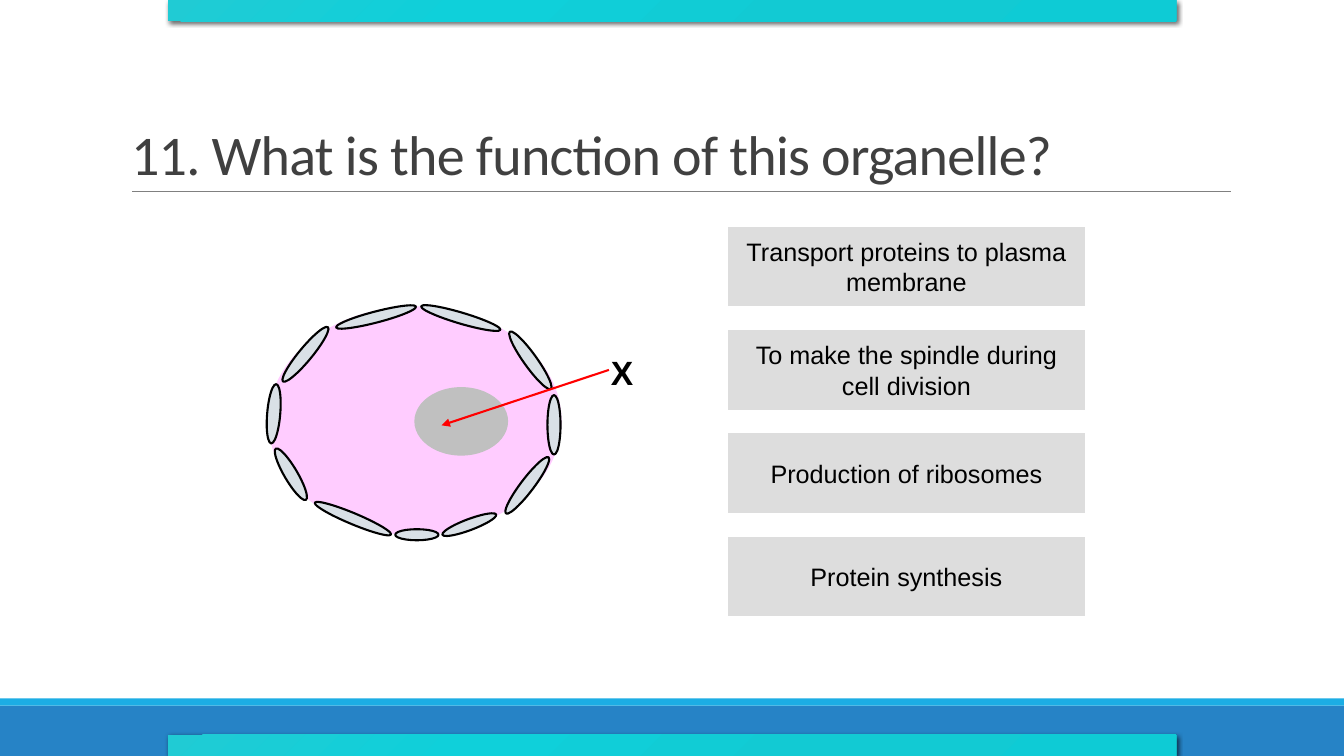
from lxml import etree
from pptx import Presentation
from pptx.dml.color import RGBColor
from pptx.enum.shapes import MSO_CONNECTOR, MSO_SHAPE
from pptx.enum.text import MSO_ANCHOR, MSO_AUTO_SIZE, PP_ALIGN
from pptx.oxml import parse_xml
from pptx.oxml.ns import nsdecls, qn
from pptx.util import Inches, Pt

RECTANGLE = MSO_SHAPE.RECTANGLE
OVAL = MSO_SHAPE.OVAL
BUTTON = MSO_SHAPE.ACTION_BUTTON_CUSTOM
STRAIGHT = MSO_CONNECTOR.STRAIGHT

TITLE = "11. What is the function of this organelle?"
ANSWERS = [
    "Transport proteins to plasma membrane",
    "To make the spindle during cell division",
    "Production of ribosomes",
    "Protein synthesis",
]
COLORS = {
    "footer": "2683C6",
    "footer_edge": "1CADE4",
    "rule": "808080",
    "title": "404040",
    "button": "DDDDDD",
    "text": "000000",
    "nucleus": "FFCCFF",
    "membrane": "D9E0E6",
    "nucleolus": "C0C0C0",
    "pointer": "FF0000",
}
BAND_STOPS = [(0, "0ECBD5"), (34, "12CAD3"), (70, "0FD0DA"), (100, "20CBD4")]
MEMBRANE = [
    (4.88, 4.75, 0.7, 0.13, 307.2),
    (4.91, 3.51, 0.7, 0.13, 234.4),
    (4.16, 3.1, 0.82, 0.11, 196.5),
    (4.37, 5.15, 0.57, 0.11, 339.4),
    (3.09, 5.09, 0.82, 0.11, 22.7),
    (3.32, 3.09, 0.82, 0.11, 345.4),
    (2.68, 3.45, 0.7, 0.13, 309.6),
    (2.59, 4.64, 0.59, 0.13, 239.6),
    (2.42, 4.04, 0.59, 0.13, 274.8),
    (5.2, 4.15, 0.59, 0.13, 270),
    (3.92, 5.25, 0.43, 0.11, 0),
]
PAGE_WIDTH, PAGE_HEIGHT = 13.33, 7.5
BUTTON_LEFT, BUTTON_TOP, BUTTON_WIDTH, BUTTON_HEIGHT = 7.22, 2.25, 3.54, 0.79
BUTTON_STEP = 1.025
BAND_WIDTH, BAND_HEIGHT = 10, 0.21


def color(name):
    return RGBColor.from_string(COLORS[name])


def add_filled(shapes, kind, frame, fill, outline=None):
    shape = shapes.add_shape(kind, *map(Inches, frame))
    shape.shadow.inherit = False
    shape.fill.solid()
    shape.fill.fore_color.rgb = color(fill)
    if outline:
        shape.line.color.rgb = color(outline)
        shape.line.width = Pt(1.5)
    else:
        shape.line.fill.background()
    return shape


def add_line(shapes, start, end, stroke, width):
    line = shapes.add_connector(STRAIGHT, *map(Inches, start + end))
    line.line.color.rgb = color(stroke)
    line.line.width = Pt(width)
    etree.SubElement(line._element.spPr, qn("a:effectLst"))
    return line


def style(para, size, name, font="Arial", bold=False):
    para.font.size = Pt(size)
    para.font.name = font
    para.font.bold = bold
    para.font.color.rgb = color(name)


def add_title(page):
    title = page.shapes.title
    title.left, title.top, title.width, title.height = map(Inches, (1.2, 0.31, 11, 1.59))
    frame = title.text_frame
    frame.text = TITLE
    frame.auto_size = MSO_AUTO_SIZE.NONE
    frame.vertical_anchor = MSO_ANCHOR.BOTTOM
    para = frame.paragraphs[0]
    para.alignment = PP_ALIGN.LEFT
    para.line_spacing = 0.85
    style(para, 40, "title", "Calibri")
    para.runs[0]._r.get_or_add_rPr().set("spc", "-50")


def add_answers(page):
    for row, answer in enumerate(ANSWERS):
        top = BUTTON_TOP + row * BUTTON_STEP
        button = add_filled(page.shapes, BUTTON, (BUTTON_LEFT, top, BUTTON_WIDTH, BUTTON_HEIGHT), "button")
        frame = button.text_frame
        frame.text = answer
        frame.word_wrap = True
        frame.vertical_anchor = MSO_ANCHOR.MIDDLE
        frame.paragraphs[0].alignment = PP_ALIGN.CENTER
        style(frame.paragraphs[0], 18, "text")


def add_organelle(page):
    label = page.shapes.add_textbox(*map(Inches, (5.96, 3.44, 0.42, 0.5)))
    label.text_frame.text = "X"
    label.text_frame.word_wrap = False
    style(label.text_frame.paragraphs[0], 24, "text", bold=True)

    organelle = page.shapes.add_group_shape().shapes
    add_filled(organelle, OVAL, (2.66, 3.04, 2.91, 2.27), "nucleus")
    for *frame, angle in MEMBRANE:
        piece = add_filled(organelle, OVAL, frame, "membrane", "text")
        piece.rotation = angle
    add_filled(organelle, OVAL, (4.11, 3.84, 0.93, 0.68), "nucleolus")

    pointer = add_line(page.shapes, (6.04, 3.67), (4.38, 4.22), "pointer", 1.5)
    etree.SubElement(pointer.line._get_or_add_ln(), qn("a:tailEnd"), type="triangle")


def add_band(page, top):
    left = (PAGE_WIDTH - BAND_WIDTH) / 2
    band = add_filled(page.shapes, RECTANGLE, (left, top, BAND_WIDTH, BAND_HEIGHT), "footer_edge")
    stops = "".join(
        f'<a:gs pos="{position * 1000}"><a:srgbClr val="{value}"/></a:gs>'
        for position, value in BAND_STOPS
    )
    gradient = parse_xml(
        f'<a:gradFill {nsdecls("a")} rotWithShape="1"><a:gsLst>{stops}</a:gsLst>'
        '<a:path path="circle"><a:fillToRect l="100000" t="100000"/></a:path></a:gradFill>'
    )
    shadow = parse_xml(
        f'<a:outerShdw {nsdecls("a")} blurRad="{Pt(3.5)}" dist="{Pt(2)}" dir="2700000">'
        '<a:srgbClr val="000000"><a:alpha val="60000"/></a:srgbClr></a:outerShdw>'
    )
    properties = band._element.spPr
    properties.replace(properties.find(qn("a:solidFill")), gradient)
    properties.find(qn("a:effectLst")).append(shadow)


def main():
    deck = Presentation()
    deck.slide_width, deck.slide_height = Inches(PAGE_WIDTH), Inches(PAGE_HEIGHT)
    page = deck.slides.add_slide(deck.slide_layouts[5])
    add_filled(page.shapes, RECTANGLE, (0, 7, PAGE_WIDTH, 0.5), "footer")
    add_filled(page.shapes, RECTANGLE, (0, 6.93, PAGE_WIDTH, 0.07), "footer_edge")
    add_line(page.shapes, (1.31, 1.9), (12.21, 1.9), "rule", 0.5)
    add_title(page)
    add_answers(page)
    add_organelle(page)
    for top in (0, PAGE_HEIGHT - BAND_HEIGHT):
        add_band(page, top)
    deck.save("out.pptx")


if __name__ == "__main__":
    main()
